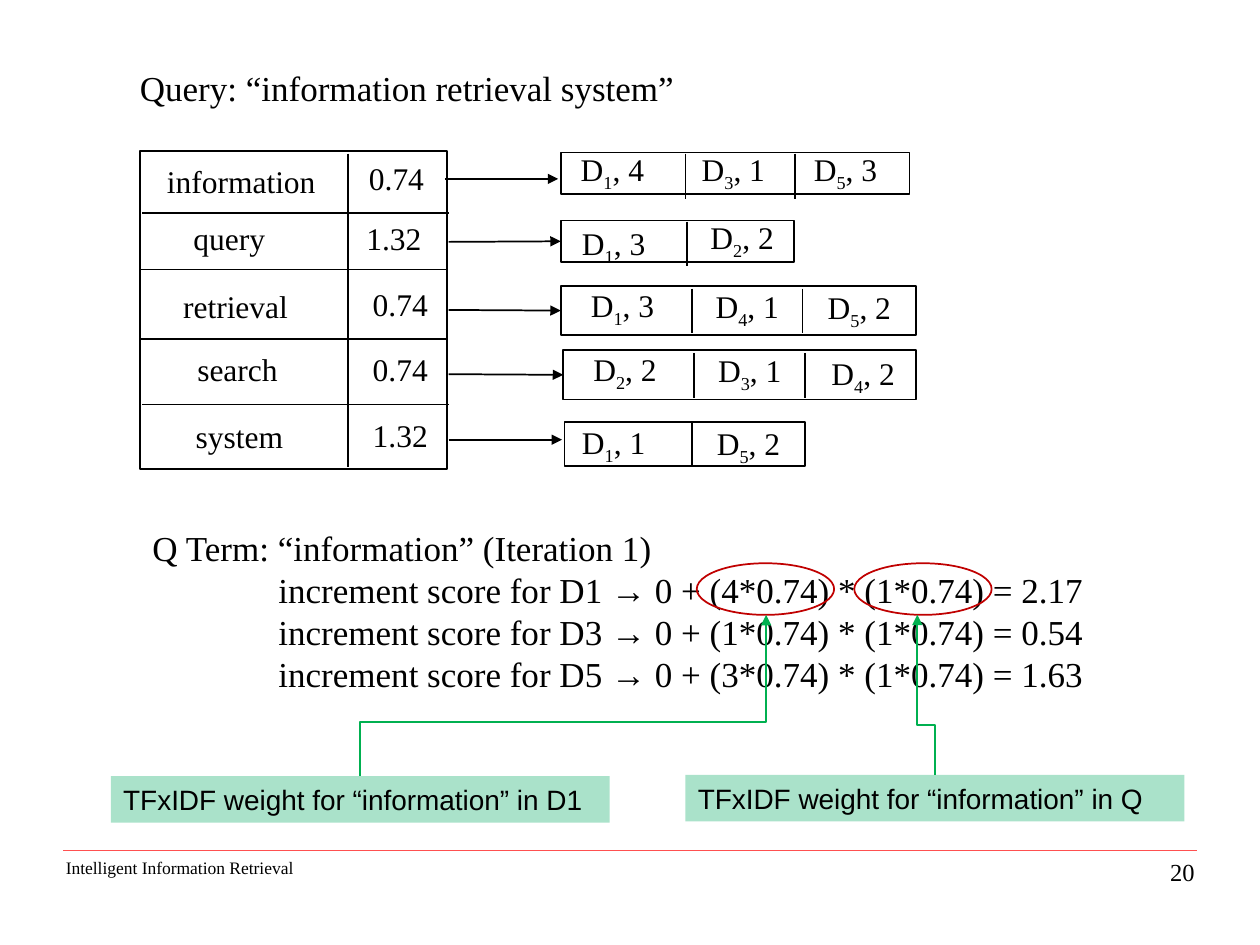
from lxml.etree import SubElement
from pptx import Presentation
from pptx.dml.color import RGBColor
from pptx.enum.shapes import MSO_CONNECTOR as CONN, MSO_SHAPE as SHAPE
from pptx.enum.text import MSO_ANCHOR as ANCHOR, MSO_AUTO_SIZE as FIT, PP_ALIGN as ALIGN
from pptx.oxml.ns import qn
from pptx.util import Inches, Pt

BLACK = RGBColor(0x00, 0x00, 0x00)
WHITE = RGBColor(0xFF, 0xFF, 0xFF)
CORAL = RGBColor(0xFF, 0x50, 0x50)
RED = RGBColor(0xC0, 0x00, 0x00)
GREEN = RGBColor(0x00, 0xB0, 0x50)
MINT = RGBColor(0xAA, 0xE2, 0xCA)
SERIF, SANS = "Times New Roman", "Arial"

QUERY = "Query: “information retrieval system”"
STEPS = [
    "Q Term: “information” (Iteration 1)",
    "increment score for D1 → 0 + (4*0.74) * (1*0.74) = 2.17",
    "increment score for D3 → 0 + (1*0.74) * (1*0.74) = 0.54",
    "increment score for D5 → 0 + (3*0.74) * (1*0.74) = 1.63",
]
TERMS = [
    ("information", 1.22, 1.24, 1.39, "0.74", 2.83, 1.21),
    ("query", 1.43, 1.69, 0.78, "1.32", 2.81, 1.69),
    ("retrieval", 1.35, 2.23, 1.04, "0.74", 2.86, 2.21),
    ("search", 1.46, 2.73, 0.85, "0.74", 2.86, 2.73),
    ("system", 1.45, 3.26, 0.9, "1.32", 2.86, 3.25),
]
RULES = [(1.13, 1.69), (1.11, 2.14), (1.11, 2.69), (1.13, 3.21)]
LISTS = [
    dict(box=(4.45, 1.21, 2.77, 0.33), cuts=(5.44, 6.31), span=(1.22, 1.58),
         arrow=(3.53, 4.43, 1.42),
         docs=[("D1, 4", 4.5, 1.14), ("D3, 1", 5.46, 1.14), ("D5, 3", 6.35, 1.14)]),
    dict(box=(4.45, 1.75, 1.85, 0.33), cuts=(5.45,), span=(1.76, 2.11),
         arrow=(3.56, 4.45, 1.92),
         docs=[("D1, 3", 4.51, 1.73), ("D2, 2", 5.53, 1.68)]),
    dict(box=(4.45, 2.27, 2.82, 0.39), cuts=(5.49, 6.37), span=(2.29, 2.64),
         arrow=(3.56, 4.45, 2.46),
         docs=[("D1, 3", 4.58, 2.22), ("D4, 1", 5.57, 2.23), ("D5, 2", 6.46, 2.24)]),
    dict(box=(4.47, 2.78, 2.8, 0.39), cuts=(5.51, 6.39), span=(2.8, 3.16),
         arrow=(3.56, 4.47, 2.97),
         docs=[("D2, 2", 4.6, 2.73), ("D3, 1", 5.59, 2.74), ("D4, 2", 6.49, 2.76)]),
    dict(box=(4.48, 3.35, 1.91, 0.35), cuts=(5.49,), span=(3.36, 3.71),
         arrow=(3.56, 4.46, 3.49),
         docs=[("D1, 1", 4.51, 3.31), ("D5, 2", 5.58, 3.32)]),
]
NOTES = [
    dict(text="TFxIDF weight for “information” in D1", left=0.88, top=6.16,
         ring=5.53, tip=6.08, bend=0.335),
    dict(text="TFxIDF weight for “information” in Q", left=5.44, top=6.15,
         ring=6.78, tip=7.28, bend=0.31),
]

deck = Presentation()
deck.slide_width, deck.slide_height = Inches(10), Inches(7.5)
slide = deck.slides.add_slide(deck.slide_layouts[1])
shapes = slide.shapes


def place(item, left, top, width, height):
    item.left, item.top = Inches(left), Inches(top)
    item.width, item.height = Inches(width), Inches(height)


def write(text, box=None, item=None, size=18, font=SERIF, align=ALIGN.LEFT,
          wrap=False, sub=False, indent=0):
    item = item or shapes.add_textbox(0, 0, 0, 0)
    if box:
        place(item, *box)
    frame = item.text_frame
    frame.auto_size, frame.word_wrap = FIT.NONE, wrap
    frame.vertical_anchor = ANCHOR.TOP
    lines = [text] if isinstance(text, str) else text
    for i, line in enumerate(lines):
        para = frame.add_paragraph() if i else frame.paragraphs[0]
        para.alignment, para.space_before = align, Pt(0)
        if indent:
            props = para._p.get_or_add_pPr()
            props.set("marL", str(Inches(indent) if i else 0))
            props.set("indent", "0")
            SubElement(props, qn("a:buNone"))
        parts = [line[0], line[1], line[2:]] if sub else [line]
        for n, part in enumerate(parts):
            run = para.add_run()
            run.text = part
            run.font.size, run.font.name = Pt(size), font
            run.font.color.rgb = BLACK
            if n == 1:
                run._r.get_or_add_rPr().set("baseline", "-25000")
    return item


def draw(kind, box, fill=None, line=None):
    item = shapes.add_shape(kind, 0, 0, 0, 0)
    place(item, *box)
    item.shadow.inherit = False
    if fill is None:
        item.fill.background()
    else:
        item.fill.solid()
        item.fill.fore_color.rgb = fill
    if line is None:
        item.line.fill.background()
    else:
        item.line.color.rgb, item.line.width = line, Pt(1)
    return item


def link(x1, y1, x2, y2, color=BLACK, width=1, head=False, kind=CONN.STRAIGHT):
    item = shapes.add_connector(kind, *map(Inches, (x1, y1, x2, y2)))
    item.line.color.rgb, item.line.width = color, Pt(width)
    if head:
        SubElement(item.line._get_or_add_ln(), qn("a:tailEnd"), type="triangle")
    SubElement(item._element.spPr, qn("a:effectLst"))
    return item


def bend(x1, y1, x2, y2, ratio):
    mx, my = (x1 + x2) / 2, (y1 + y2) / 2
    dx, dy = (x2 - x1) / 2, (y2 - y1) / 2
    item = link(mx + dy, my - dx, mx - dy, my + dx, GREEN, head=True, kind=CONN.ELBOW)
    props = item._element.spPr
    props.find(qn("a:xfrm")).set("rot", str(270 * 60000))
    guides = props.find(qn("a:prstGeom")).get_or_add_avLst()
    SubElement(guides, qn("a:gd"), name="adj1", fmla=f"val {round(ratio * 100000)}")


link(0.5, 6.75, 9.5, 6.75, CORAL, 0.5)
write("Intelligent Information Retrieval", (0.42, 6.75, 2.01, 0.27), size=10,
      align=ALIGN.CENTER)
write("20", (7.5, 6.75, 2.08, 0.25), size=14, align=ALIGN.RIGHT, wrap=True)
title, body = slide.placeholders
write(QUERY, (1.01, 0.48, 4.61, 0.44), title, size=20)
write(STEPS, (1.11, 4.13, 7.64, 1.45), body, size=20, indent=1)

draw(SHAPE.RECTANGLE, (1.11, 1.2, 2.44, 2.52), WHITE, BLACK)
link(2.76, 1.22, 2.76, 3.71)
for x, y in RULES:
    link(x, y, x + 2.43, y)
for term, x, y, wide, score, sx, sy in TERMS:
    write(term, (x, y, wide, 0.4), align=ALIGN.CENTER)
    write(score, (sx, sy, 0.64, 0.4))

for row in LISTS:
    left, top, wide, high = row["box"]
    cell = draw(SHAPE.RECTANGLE, row["box"], WHITE, BLACK)
    for x in row["cuts"]:
        link(x, row["span"][0], x, row["span"][1])
    start, end, y = row["arrow"]
    arrow = link(start, y, end, y, head=True)
    if abs(y - top - high / 2) < 0.02:
        arrow.end_connect(cell, 1)
    for doc, x, y in row["docs"]:
        write(doc, (x, y, 0.72, 0.4), align=ALIGN.CENTER, sub=True)

for note in NOTES:
    draw(SHAPE.OVAL, (note["ring"], 4.47, 1.09, 0.41), line=RED)
    left, top = note["left"], note["top"]
    label = draw(SHAPE.RECTANGLE, (left, top, 3.96, 0.37), MINT)
    write(note["text"], item=label, size=16, font=SANS)
    bend(left + 1.98, top, note["tip"], 4.88, note["bend"])

deck.save("out.pptx")
